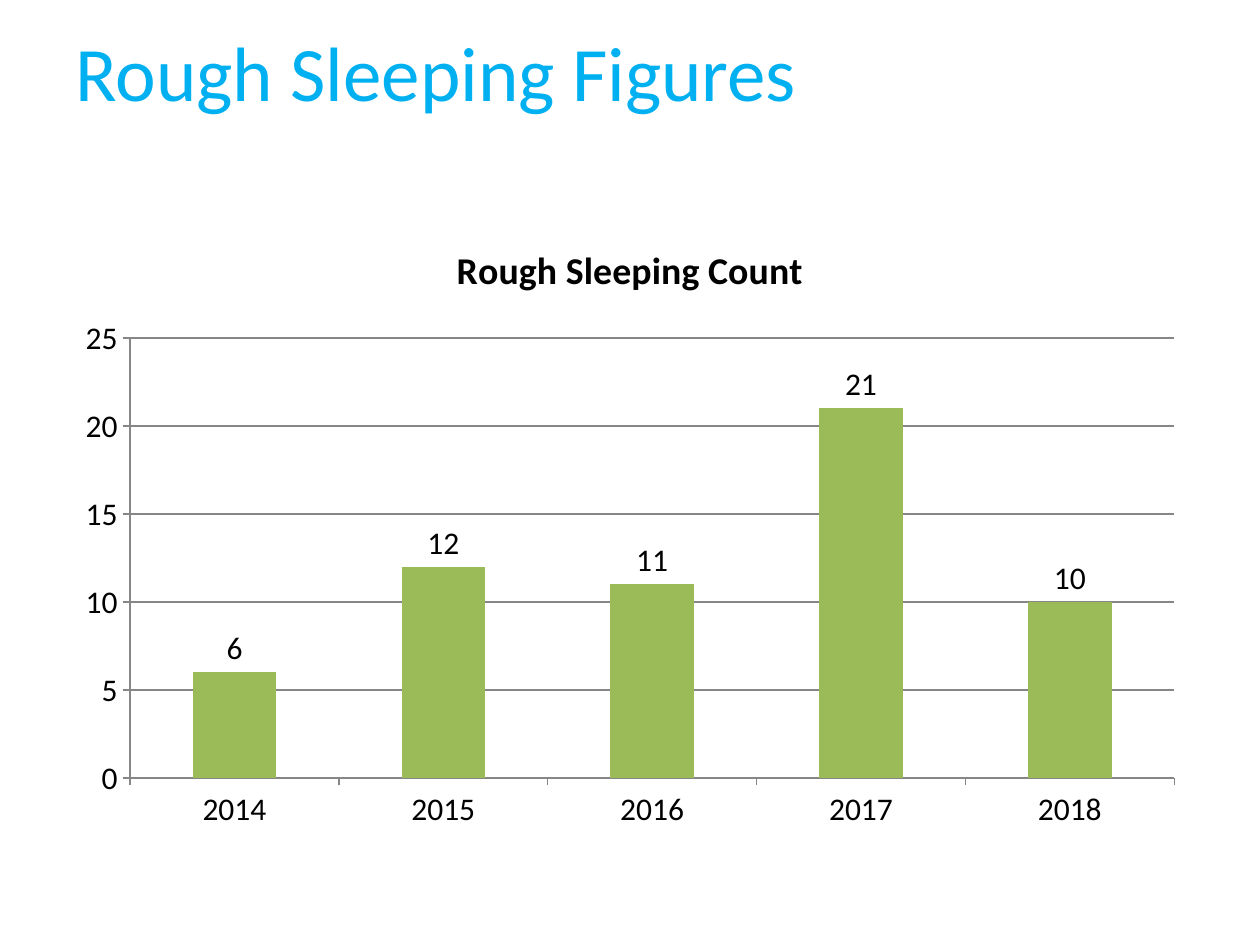
from pptx import Presentation
from pptx import util as u
from pptx.chart import data
from pptx.dml import color
from pptx.enum import chart as charts, text


def rgb(value):
    return color.RGBColor.from_string(value)


class SlideBuilder:
    """Holds the style and the slide; places are shares of the slide's size."""

    FONT = "Calibri"
    BLACK, BLUE, GREEN, GREY = "000000", "00B0F0", "9BBB59", "868686"

    def __init__(self, deck):
        self.deck = deck
        self.page = deck.slides.add_slide(deck.slide_layouts[6])

    def place(self, left, top, width, height):
        across, down = self.deck.slide_width, self.deck.slide_height
        return [u.Emu(round(share * side)) for share, side in
                zip((left, top, width, height), (across, down, across, down))]

    def style(self, font, size, tone, bold=False):
        font.name, font.size, font.bold = self.FONT, u.Pt(size), bold
        font.color.rgb = rgb(tone)

    def heading(self, words, area):
        box = self.page.shapes.add_textbox(*self.place(*area))
        frame = box.text_frame
        frame.word_wrap = True
        frame.vertical_anchor = text.MSO_ANCHOR.MIDDLE
        span = frame.paragraphs[0].add_run()
        span.text = words
        self.style(span.font, 44, self.BLUE)

    def columns(self, title, counts, area):
        table = data.CategoryChartData()
        table.categories = list(counts)
        table.add_series(title, list(counts.values()))
        chart = self.page.shapes.add_chart(
            charts.XL_CHART_TYPE.COLUMN_CLUSTERED, *self.place(*area), table).chart
        self.style(chart.font, 18, self.BLACK)
        chart.has_legend = False

        # Chart title
        chart.has_title = True
        span = chart.chart_title.text_frame.paragraphs[0].add_run()
        span.text = title
        self.style(span.font, 21.6, self.BLACK, bold=True)
        chart.chart_title.include_in_layout = False

        # Bars and their values
        plot = chart.plots[0]
        plot.gap_width = 150
        plot.vary_by_categories = False
        fill = plot.series[0].format.fill
        fill.solid()
        fill.fore_color.rgb = rgb(self.GREEN)
        plot.has_data_labels = True
        plot.data_labels.show_value = True
        plot.data_labels.position = charts.XL_LABEL_POSITION.OUTSIDE_END

        # Axes and gridlines
        chart.value_axis.has_major_gridlines = True
        for axis in (chart.category_axis, chart.value_axis):
            axis.major_tick_mark = charts.XL_TICK_MARK.OUTSIDE
            axis.minor_tick_mark = charts.XL_TICK_MARK.NONE
        for part in (chart.category_axis, chart.value_axis,
                     chart.value_axis.major_gridlines):
            part.format.line.color.rgb = rgb(self.GREY)
            part.format.line.width = u.Pt(0.75)
        chart.value_axis.minimum_scale = 0
        chart.value_axis.maximum_scale = 25
        chart.value_axis.major_unit = 5


def main():
    deck = Presentation()
    deck.slide_width, deck.slide_height = u.Inches(10), u.Inches(7.5)
    slide = SlideBuilder(deck)
    slide.heading("Rough Sleeping Figures", (0.05, 0, 0.8, 0.15))
    slide.columns("Rough Sleeping Count",
                  {"2014": 6, "2015": 12, "2016": 11, "2017": 21, "2018": 10},
                  (0.05, 0.23, 0.9, 0.66))
    deck.save("out.pptx")


if __name__ == "__main__":
    main()
